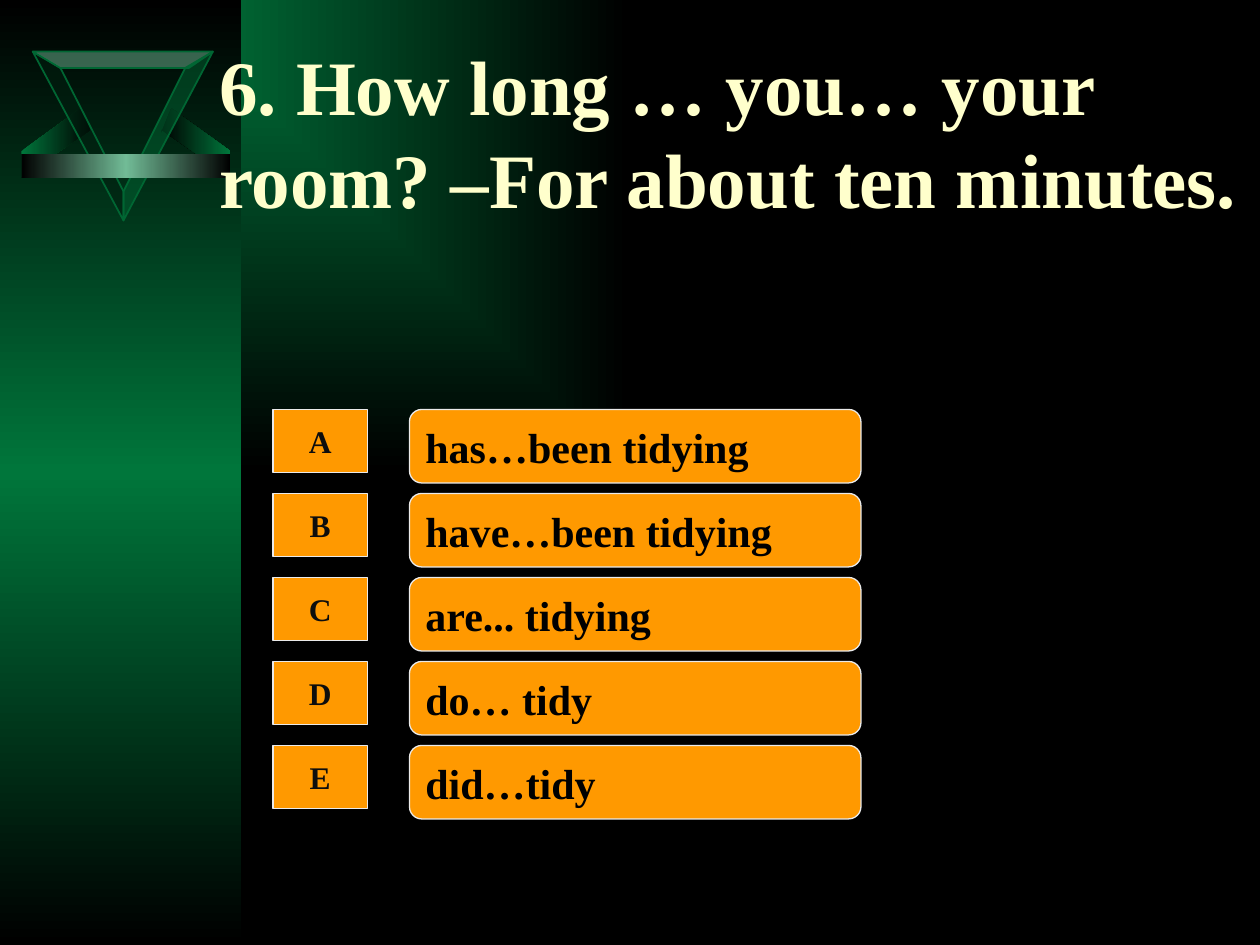
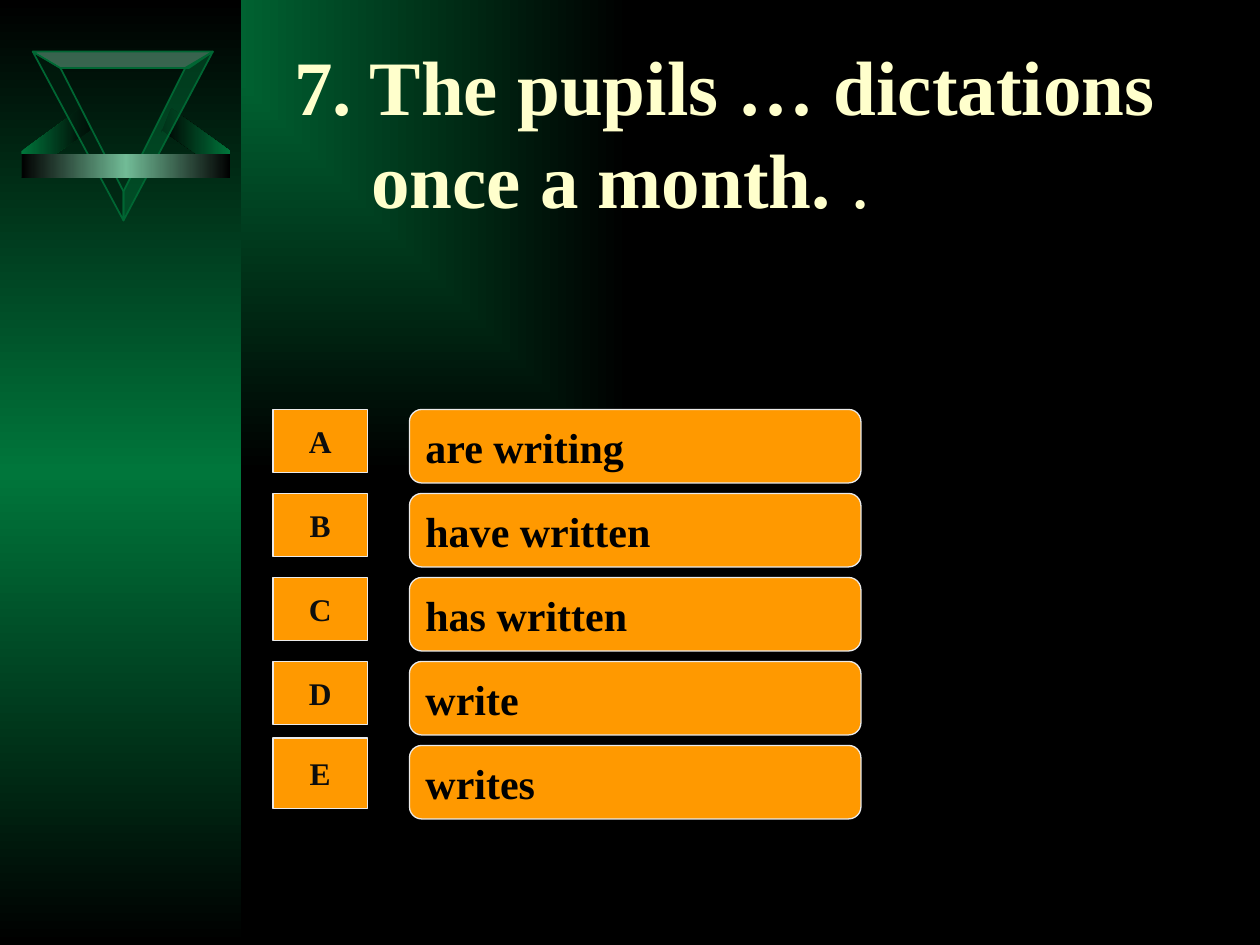
from lxml import etree
from pptx import Presentation
from pptx.dml.color import RGBColor
from pptx.enum.shapes import MSO_SHAPE as Kind
from pptx.enum.text import MSO_ANCHOR as Anchor, PP_ALIGN as Align
from pptx.oxml import parse_xml
from pptx.oxml.ns import nsdecls, qn
from pptx.util import Inches, Pt

# Grid of 120 columns and 90 rows
COLS, ROWS = 120, 90
UNIT = Inches(10) // COLS
CENT = Inches(1) // 100

# Shared look
FACE = "Times New Roman"
GREEN, MINT, EDGE, BLACK = "00763B", "71BB96", "006633", "000000"
CREAM, ORANGE, PALE, INK = "FFFFCC", "FF9900", "EAEAEA", "0D0D0D"
DOWN = '<a:lin ang="5400000" scaled="0"/>'
ACROSS = '<a:lin ang="0" scaled="0"/>'
CORNER = '<a:path path="rect"><a:fillToRect r="100000" b="100000"/></a:path>'
hue = RGBColor.from_string

# Emblem outlines, in hundredths of an inch
WING = [(17, 120), (17, 141), (72, 103), (72, 105), (64, 86)]
WINGS = [([(200 - x, y) for x, y in WING], [BLACK, GREEN]),
         (WING, [GREEN, BLACK])]
SIDES = [([(98, 175), (98, 152), (48, 54), (26, 41)], "002010"),
         ([(26, 41), (48, 54), (150, 54), (169, 41)], MINT),
         ([(98, 175), (98, 152), (147, 54), (169, 41)], EDGE)]

# Per slide: title, its unbolded tail, left, width, hanging indent, answers,
# top and height of the last button
QUIZ = [
    ("6. How long … you… your room? –For about ten minutes.", "",
     19.68, 100.32, 0,
     ["has…been tidying", "have…been tidying", "are... tidying",
      "do… tidy", "did…tidy"], (71, 6)),
    ("7. The pupils … dictations\vonce a month. ", ".",
     25, 93, 44,
     ["are writing", "have written", "has written", "write", "writes"],
     (70.3, 6.7)),
]


def blend(item, fill, tones, route):
    """Fill with evenly spaced colour stops along a route."""
    fill.gradient()
    old = next(item.element.iter(qn("a:gradFill")))
    stops = "".join(
        f'<a:gs pos="{100000 * i // (len(tones) - 1)}"><a:srgbClr val="{t}"/></a:gs>'
        for i, t in enumerate(tones))
    new = parse_xml(f'<a:gradFill {nsdecls("a")} rotWithShape="1">'
                    f'<a:gsLst>{stops}</a:gsLst>{route}</a:gradFill>')
    old.getparent().replace(old, new)


def write(shape, text, size, tone, align=Align.LEFT, wrap=False):
    """Put bold text in the middle of a shape and return its paragraph."""
    frame = shape.text_frame
    frame.word_wrap = wrap
    frame.vertical_anchor = Anchor.MIDDLE
    para = frame.paragraphs[0]
    para.text = text
    para.alignment = align
    font = para.font
    font.name, font.size, font.bold = FACE, Pt(size), True
    font.color.rgb = hue(tone)
    return para


deck = Presentation()
deck.slide_width, deck.slide_height = COLS * UNIT, ROWS * UNIT

for title, tail, left, width, hang, answers, last in QUIZ:
    slide = deck.slides.add_slide(deck.slide_layouts[6])
    shapes = slide.shapes
    blend(slide, slide.background.fill, [GREEN, BLACK], CORNER)

    # Side band
    band = shapes.add_shape(Kind.RECTANGLE, 0, 0, 23 * UNIT, ROWS * UNIT)
    blend(band, band.fill, [BLACK, GREEN, BLACK], DOWN)
    band.line.fill.background()
    band.shadow.inherit = False

    # Emblem: wings, translucent sides, bar
    for points, paint in WINGS + SIDES:
        pen = shapes.build_freeform(*points[0], scale=CENT)
        pen.add_line_segments(points[1:], close=True)
        part = pen.convert_to_shape()
        part.shadow.inherit = False
        if isinstance(paint, list):
            blend(part, part.fill, paint, ACROSS)
            part.line.fill.background()
        else:
            part.fill.solid()
            part.fill.fore_color.rgb = hue(paint)
            clr = next(part.element.iter(qn("a:srgbClr")))
            etree.SubElement(clr, qn("a:alpha"), val="50000")
            part.line.color.rgb = hue(EDGE)
            part.line.width = Pt(1)
    bar = shapes.add_shape(Kind.RECTANGLE, 17 * CENT, 122 * CENT,
                           166 * CENT, 19 * CENT)
    blend(bar, bar.fill, [BLACK, MINT, BLACK], ACROSS)
    bar.line.fill.background()
    bar.shadow.inherit = False

    # Title
    head = shapes.add_textbox(int(left * UNIT), 3 * UNIT,
                              int(width * UNIT), 19 * UNIT)
    para = write(head, title, 44, CREAM, wrap=True)
    if hang:
        props = para._p.get_or_add_pPr()
        props.set("marL", str(Pt(hang + 11)))
        props.set("indent", str(-Pt(hang)))
    if tail:
        run = para.add_run()
        run.text = tail
        run.font.bold = False

    # Answers and their letter buttons
    for i, (mark, answer) in enumerate(zip("ABCDE", answers)):
        row = 39 + 8 * i
        top, high = last if mark == "E" else (row, 6)
        field = shapes.add_shape(Kind.ROUNDED_RECTANGLE, 39 * UNIT, row * UNIT,
                                 43 * UNIT, 7 * UNIT)
        key = shapes.add_shape(Kind.ACTION_BUTTON_CUSTOM, 26 * UNIT,
                               int(top * UNIT), 9 * UNIT, int(high * UNIT))
        for shape in (field, key):
            shape.shadow.inherit = False
            shape.fill.solid()
            shape.fill.fore_color.rgb = hue(ORANGE)
            shape.line.color.rgb = hue(PALE)
            shape.line.width = Pt(0.75)
        write(field, answer, 24, BLACK)
        write(key, mark, 18, INK, Align.CENTER)

deck.save("out.pptx")
